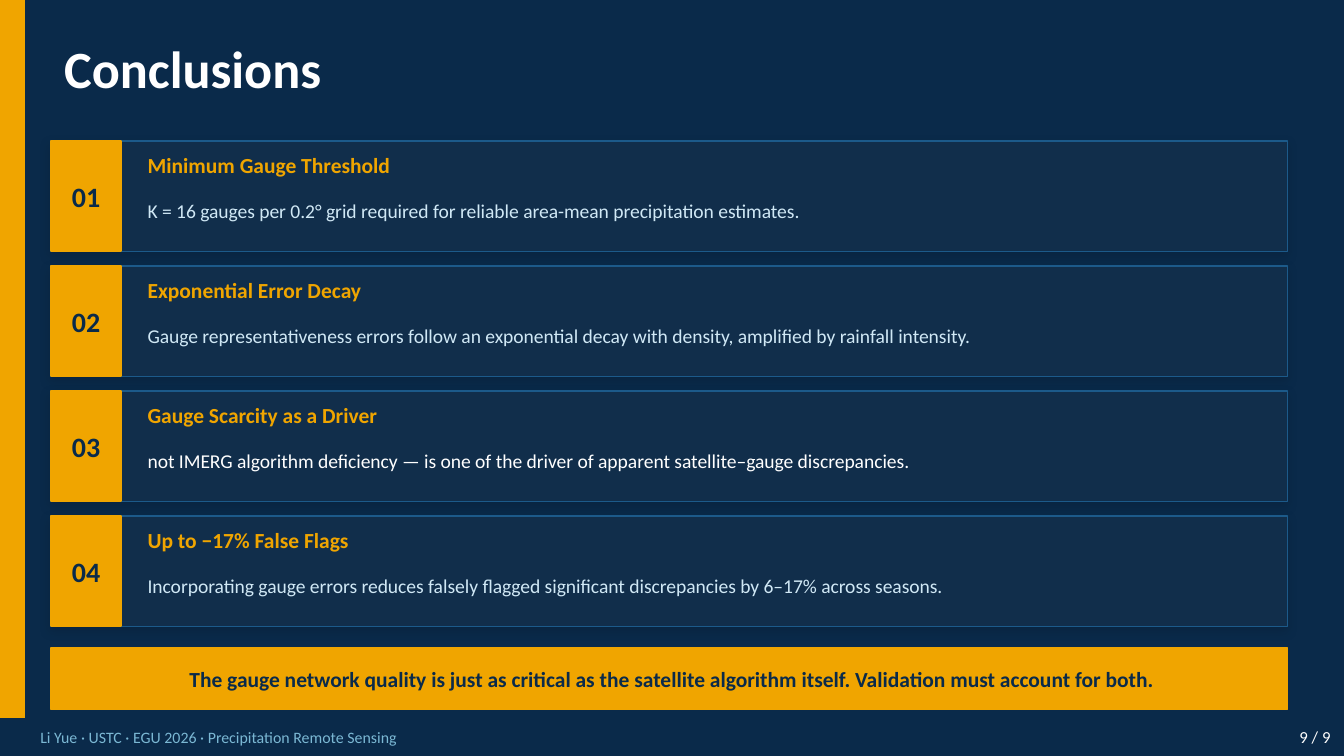
from dataclasses import dataclass

from lxml import etree
from pptx import Presentation
from pptx.dml.color import RGBColor
from pptx.enum.shapes import MSO_SHAPE
from pptx.enum.text import MSO_ANCHOR, PP_ALIGN
from pptx.oxml.ns import qn
from pptx.util import Emu, Pt

RECTANGLE = MSO_SHAPE.RECTANGLE
MIDDLE = MSO_ANCHOR.MIDDLE
LEFT, CENTER, RIGHT = PP_ALIGN.LEFT, PP_ALIGN.CENTER, PP_ALIGN.RIGHT

EMU_PER_PX = 4572
SLIDE_WIDTH, SLIDE_HEIGHT = 2000, 1125
CONTENT_LEFT, CONTENT_WIDTH = 76, 1840
CARD_TOP, CARD_HEIGHT, CARD_STEP = 210, 164, 186
BADGE_WIDTH = 104
CARD_TEXT_LEFT = 200
DEFAULT_INSETS = (20, 10, 20, 10)
NO_INSETS = (0, 0, 0, 0)


@dataclass(frozen=True)
class Theme:
    font: str = "Calibri"
    navy: str = "0A2A4A"
    panel: str = "112E4B"
    border: str = "1C5A8A"
    amber: str = "F0A500"
    white: str = "FFFFFF"
    pale: str = "D0E8F5"
    sky: str = "7BB8D4"
    shadow: str = "000000"
    title_size: float = 28
    number_size: float = 15
    heading_size: float = 11.5
    body_size: float = 10.5
    footer_size: float = 8.5
    page_size: float = 9


THEME = Theme()

CONCLUSIONS = [
    ("Minimum Gauge Threshold",
     "K = 16 gauges per 0.2° grid required for reliable area-mean precipitation estimates.",
     THEME.pale),
    ("Exponential Error Decay",
     "Gauge representativeness errors follow an exponential decay with density, "
     "amplified by rainfall intensity.",
     THEME.pale),
    ("Gauge Scarcity as a Driver",
     "not IMERG algorithm deficiency — is one of the driver of apparent "
     "satellite–gauge discrepancies.",
     THEME.white),
    ("Up to −17% False Flags",
     "Incorporating gauge errors reduces falsely flagged significant discrepancies "
     "by 6–17% across seasons.",
     THEME.pale),
]


def px(length):
    return Emu(length * EMU_PER_PX)


def rgb(color):
    return RGBColor.from_string(color)


def add_text(slide, box, text, size, color, bold=False, align=LEFT, insets=DEFAULT_INSETS):
    frame = slide.shapes.add_textbox(*map(px, box)).text_frame
    frame.word_wrap = True
    frame.vertical_anchor = MIDDLE
    (frame.margin_left, frame.margin_top,
     frame.margin_right, frame.margin_bottom) = map(px, insets)
    frame.text = text
    paragraph = frame.paragraphs[0]
    paragraph.alignment = align
    font = paragraph.runs[0].font
    font.name = THEME.font
    font.size = Pt(size)
    font.bold = bold
    font.color.rgb = rgb(color)


def add_block(slide, box, fill, line=None, line_width=1):
    block = slide.shapes.add_shape(RECTANGLE, *map(px, box))
    block.shadow.inherit = False
    block.fill.solid()
    block.fill.fore_color.rgb = rgb(fill)
    block.line.color.rgb = rgb(line or fill)
    block.line.width = Pt(line_width)
    return block


def add_soft_shadow(shape):
    effects = shape.element.spPr.find(qn("a:effectLst"))
    shadow = etree.SubElement(
        effects, qn("a:outerShdw"), blurRad=str(Pt(6)), dist=str(Pt(2)),
        dir=str(135 * 60000), algn="bl", rotWithShape="0")
    color = etree.SubElement(shadow, qn("a:srgbClr"), val=THEME.shadow)
    etree.SubElement(color, qn("a:alpha"), val="12000")


def add_conclusion(slide, index, heading, finding, finding_color):
    top = CARD_TOP + index * CARD_STEP
    card = add_block(slide, (CONTENT_LEFT, top, CONTENT_WIDTH, CARD_HEIGHT),
                     THEME.panel, THEME.border, 0.75)
    add_soft_shadow(card)
    badge_box = (CONTENT_LEFT, top, BADGE_WIDTH, CARD_HEIGHT)
    add_block(slide, badge_box, THEME.amber)
    add_text(slide, badge_box, f"{index + 1:02d}", THEME.number_size, THEME.navy,
             bold=True, align=CENTER, insets=NO_INSETS)
    add_text(slide, (CARD_TEXT_LEFT, top + 6, 800, 60), heading,
             THEME.heading_size, THEME.amber, bold=True)
    add_text(slide, (CARD_TEXT_LEFT, top + 64, 1680, 80), finding,
             THEME.body_size, finding_color)


def add_banner(slide):
    top, height = 964, 92
    add_block(slide, (CONTENT_LEFT, top, CONTENT_WIDTH, height), THEME.amber)
    add_text(slide, (100, top, 1800, height),
             "The gauge network quality is just as critical as the satellite algorithm "
             "itself. Validation must account for both.",
             THEME.heading_size, THEME.navy, bold=True, align=CENTER, insets=NO_INSETS)


def add_footer(slide):
    top, height = 1072, 50
    add_block(slide, (0, 1070, SLIDE_WIDTH, 55), THEME.navy)
    add_text(slide, (60, top, 1400, height),
             "Li Yue · USTC · EGU 2026 · Precipitation Remote Sensing",
             THEME.footer_size, THEME.sky, insets=NO_INSETS)
    add_text(slide, (1760, top, 220, height), "9 / 9", THEME.page_size, THEME.white,
             align=RIGHT, insets=NO_INSETS)


def main():
    presentation = Presentation()
    presentation.slide_width = px(SLIDE_WIDTH)
    presentation.slide_height = px(SLIDE_HEIGHT)
    slide = presentation.slides.add_slide(presentation.slide_layouts[6])
    slide.background.fill.solid()
    slide.background.fill.fore_color.rgb = rgb(THEME.navy)

    add_block(slide, (0, 0, 36, SLIDE_HEIGHT), THEME.amber)
    add_text(slide, (CONTENT_LEFT, 36, CONTENT_WIDTH, 130), "Conclusions",
             THEME.title_size, THEME.white, bold=True)
    for index, conclusion in enumerate(CONCLUSIONS):
        add_conclusion(slide, index, *conclusion)
    add_banner(slide)
    add_footer(slide)
    presentation.save("out.pptx")


if __name__ == "__main__":
    main()
